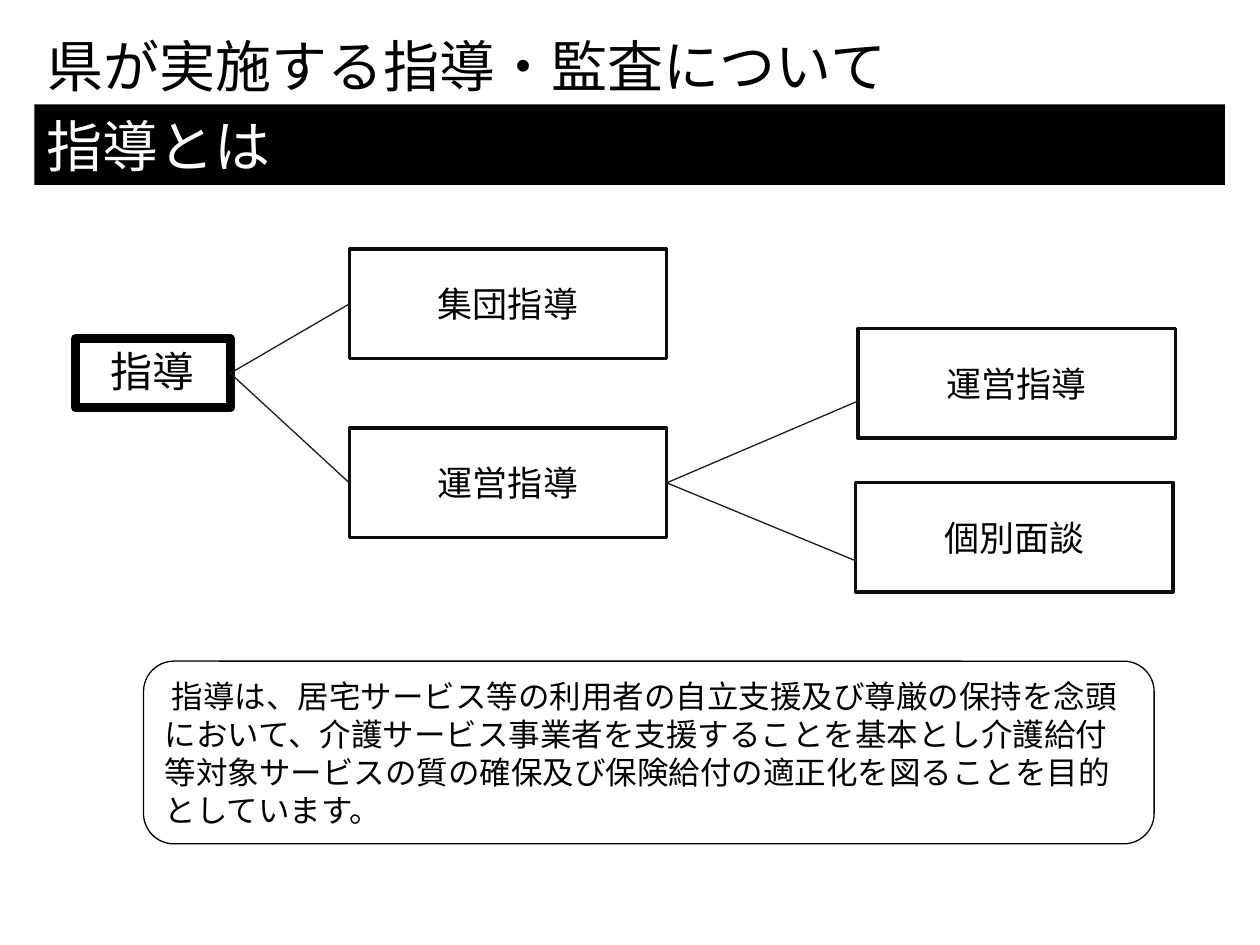
from lxml.etree import SubElement
from pptx import Presentation
from pptx.dml.color import RGBColor
from pptx.enum.shapes import MSO_CONNECTOR, MSO_SHAPE
from pptx.enum.text import MSO_ANCHOR, PP_ALIGN
from pptx.oxml.ns import qn
from pptx.util import Pt

COLORS = {"black": "000000", "white": "FFFFFF", "border": "0D0D0D", "branch": "1E1C11"}
JAPANESE_FONT = "Noto Sans CJK JP"
BRANCH_FONT = "Calibri"
LINE_HEIGHT = 1.21
BRANCH_WIDTH, BRANCH_HEIGHT = 181.4, 62.6
RIGHT_SIDE, LEFT_SIDE = 3, 1


def rgb(name):
    return RGBColor.from_string(COLORS[name])


def write(shape, text, size, color="black", font=JAPANESE_FONT,
          align=PP_ALIGN.LEFT, anchor=MSO_ANCHOR.TOP):
    frame = shape.text_frame
    frame.word_wrap = True
    frame.vertical_anchor = anchor
    paragraph = frame.paragraphs[0]
    paragraph.text = text
    paragraph.alignment = align
    paragraph.font.name = font
    paragraph.font.size = Pt(size)
    paragraph.font.color.rgb = rgb(color)
    if font == JAPANESE_FONT:
        paragraph.line_spacing = Pt(round(size * LINE_HEIGHT, 1))


def add_box(slide, left, top, width, height, fill=None, border=None,
            border_width=0.75, kind=MSO_SHAPE.RECTANGLE):
    box = slide.shapes.add_shape(kind, Pt(left), Pt(top), Pt(width), Pt(height))
    box.shadow.inherit = False
    if fill:
        box.fill.solid()
        box.fill.fore_color.rgb = rgb(fill)
    else:
        box.fill.background()
    if border:
        box.line.color.rgb = rgb(border)
        box.line.width = Pt(border_width)
    else:
        box.line.fill.background()
    return box


def add_branch(slide, text, left, top):
    branch = add_box(slide, left, top, BRANCH_WIDTH, BRANCH_HEIGHT, "white", "border", 2)
    write(branch, text, 20, font=BRANCH_FONT, align=PP_ALIGN.CENTER, anchor=MSO_ANCHOR.MIDDLE)
    return branch


def link(slide, parent, child, end_y=None):
    """Join parent to child at its middle, or at the height end_y on its left side."""
    end = Pt(end_y) if end_y else child.top + child.height // 2
    line = slide.shapes.add_connector(
        MSO_CONNECTOR.STRAIGHT, parent.left + parent.width,
        parent.top + parent.height // 2, child.left, end)
    line.begin_connect(parent, RIGHT_SIDE)
    if end_y is None:
        line.end_connect(child, LEFT_SIDE)
    line.line.color.rgb = rgb("branch")
    line.line.width = Pt(0.75)
    SubElement(line.element.spPr, qn("a:effectLst"))


def main():
    presentation = Presentation()
    presentation.slide_width, presentation.slide_height = Pt(720), Pt(540)
    slide = presentation.slides.add_slide(presentation.slide_layouts[6])

    # Title and heading band
    title = slide.shapes.add_textbox(Pt(20.2), Pt(14.4), Pt(612), Pt(46))
    write(title, "県が実施する指導・監査について", 32)
    heading = add_box(slide, 19.6, 59.6, 680.4, 46, fill="black")
    write(heading, "指導とは", 32, "white")

    # Purpose of guidance
    purpose = add_box(slide, 82, 377.8, 577.5, 104.4, border="black",
                      kind=MSO_SHAPE.ROUNDED_RECTANGLE)
    write(purpose, " 指導は、居宅サービス等の利用者の自立支援及び尊厳の保持を念頭において、"
          "介護サービス事業者を支援することを基本とし介護給付等対象サービスの質の確保"
          "及び保険給付の適正化を図ることを目的としています。", 18)

    # Guidance tree
    guidance = add_box(slide, 43.2, 193.5, 88.4, 39.6, "white", "black", 5)
    write(guidance, "指導", 24, align=PP_ALIGN.CENTER)
    operation = add_branch(slide, "運営指導", 199.6, 244.6)
    group = add_branch(slide, "集団指導", 199.6, 142.4)
    interview = add_branch(slide, "個別面談", 488.8, 275.6)
    on_site = add_branch(slide, "運営指導", 490.3, 187.8)

    # Branches
    link(slide, guidance, group)
    link(slide, guidance, operation)
    link(slide, operation, on_site, end_y=229.2)
    link(slide, operation, interview, end_y=320.4)

    presentation.save("out.pptx")


if __name__ == "__main__":
    main()
